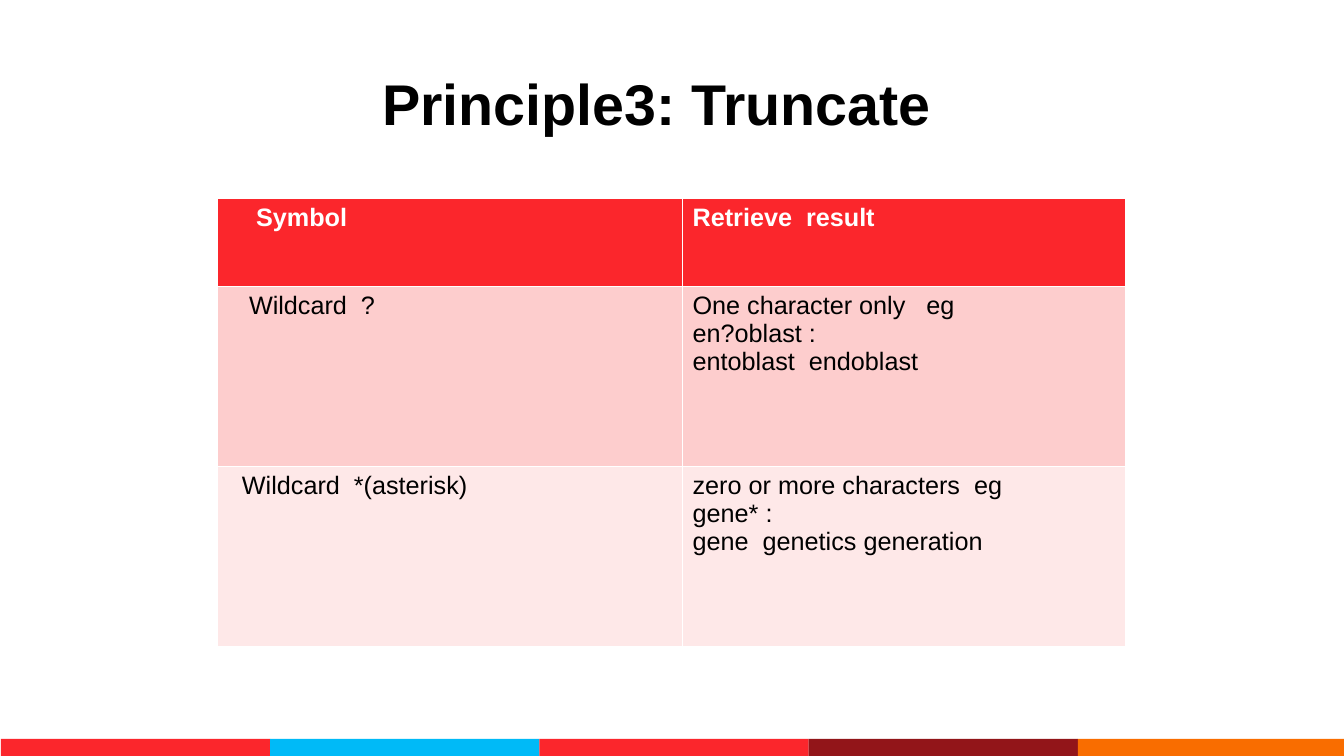
"""Build a slide on truncation wildcards with a table and a coloured footer band."""
import pptx
import pptx.dml.color
import pptx.enum.shapes
import pptx.enum.text
import pptx.util
from pptx.util import Inches

TITLE = "Principle3: Truncate"
ROWS = [
    (["Symbol"], ["Retrieve  result"]),
    (["Wildcard  ?"], ["One character only   eg", "en?oblast :", "entoblast  endoblast"]),
    (["Wildcard  *(asterisk)"],
     ["zero or more characters  eg", "gene* :", "gene  genetics generation"]),
]
FIRST_COLUMN_INDENTS = [0.28, 0.21, 0.14]
ROW_HEIGHTS = [0.87, 1.79, 1.79]
COLUMN_WIDTHS = [4.61, 4.39]
COLORS = {
    "red": "FB262C", "blue": "00BAF7", "maroon": "921519", "orange": "F96D00",
    "band": "FDCDCD", "light": "FEE8E8", "white": "FFFFFF", "black": "000000",
}
ROW_FILLS = ["red", "band", "light"]
FOOTER = ["red", "blue", "red", "maroon", "orange"]
FOOTER_WIDTH = 2.67
CELL_MARGIN = 0.1


def rgb(name):
    return pptx.dml.color.RGBColor.from_string(COLORS[name])


def fill_solid(item, color):
    item.fill.solid()
    item.fill.fore_color.rgb = rgb(color)


def write(tf, lines, size, color, bold):
    for i, line in enumerate(lines):
        p = tf.paragraphs[0] if i == 0 else tf.add_paragraph()
        p.alignment = pptx.enum.text.PP_ALIGN.LEFT
        r = p.add_run()
        r.text = line
        r.font.name = "Arial"
        r.font.size = pptx.util.Pt(size)
        r.font.bold = bold
        r.font.color.rgb = rgb(color)


def add_footer(slide):
    for i, color in enumerate(FOOTER):
        sp = slide.shapes.add_shape(
            pptx.enum.shapes.MSO_SHAPE.RECTANGLE,
            Inches(0.01 + i * FOOTER_WIDTH), Inches(7.33), Inches(FOOTER_WIDTH), Inches(0.17))
        fill_solid(sp, color)
        sp.line.fill.background()
        sp.shadow.inherit = False


def add_title(slide):
    sp = slide.shapes.title
    sp.left, sp.top, sp.width, sp.height = map(Inches, (3.69, 0.39, 9, 1.25))
    tf = sp.text_frame
    tf.word_wrap = True
    tf.vertical_anchor = pptx.enum.text.MSO_ANCHOR.MIDDLE
    write(tf, [TITLE], 41, "black", True)


def add_wildcard_table(slide):
    table = slide.shapes.add_table(
        len(ROWS), len(COLUMN_WIDTHS), Inches(2.16), Inches(1.97),
        Inches(sum(COLUMN_WIDTHS)), Inches(sum(ROW_HEIGHTS))).table
    for column, width in zip(table.columns, COLUMN_WIDTHS):
        column.width = Inches(width)
    for i, row in enumerate(ROWS):
        table.rows[i].height = Inches(ROW_HEIGHTS[i])
        header = i == 0
        for j, lines in enumerate(row):
            cell = table.cell(i, j)
            fill_solid(cell, ROW_FILLS[i])
            indent = FIRST_COLUMN_INDENTS[i] if j == 0 else 0
            cell.margin_left = Inches(CELL_MARGIN + indent)
            write(cell.text_frame, lines, 18, "white" if header else "black", header)


def main():
    prs = pptx.Presentation()
    prs.slide_width, prs.slide_height = Inches(13.33), Inches(7.5)
    slide = prs.slides.add_slide(prs.slide_layouts[5])
    add_footer(slide)
    add_title(slide)
    add_wildcard_table(slide)
    prs.save("out.pptx")


if __name__ == "__main__":
    main()
